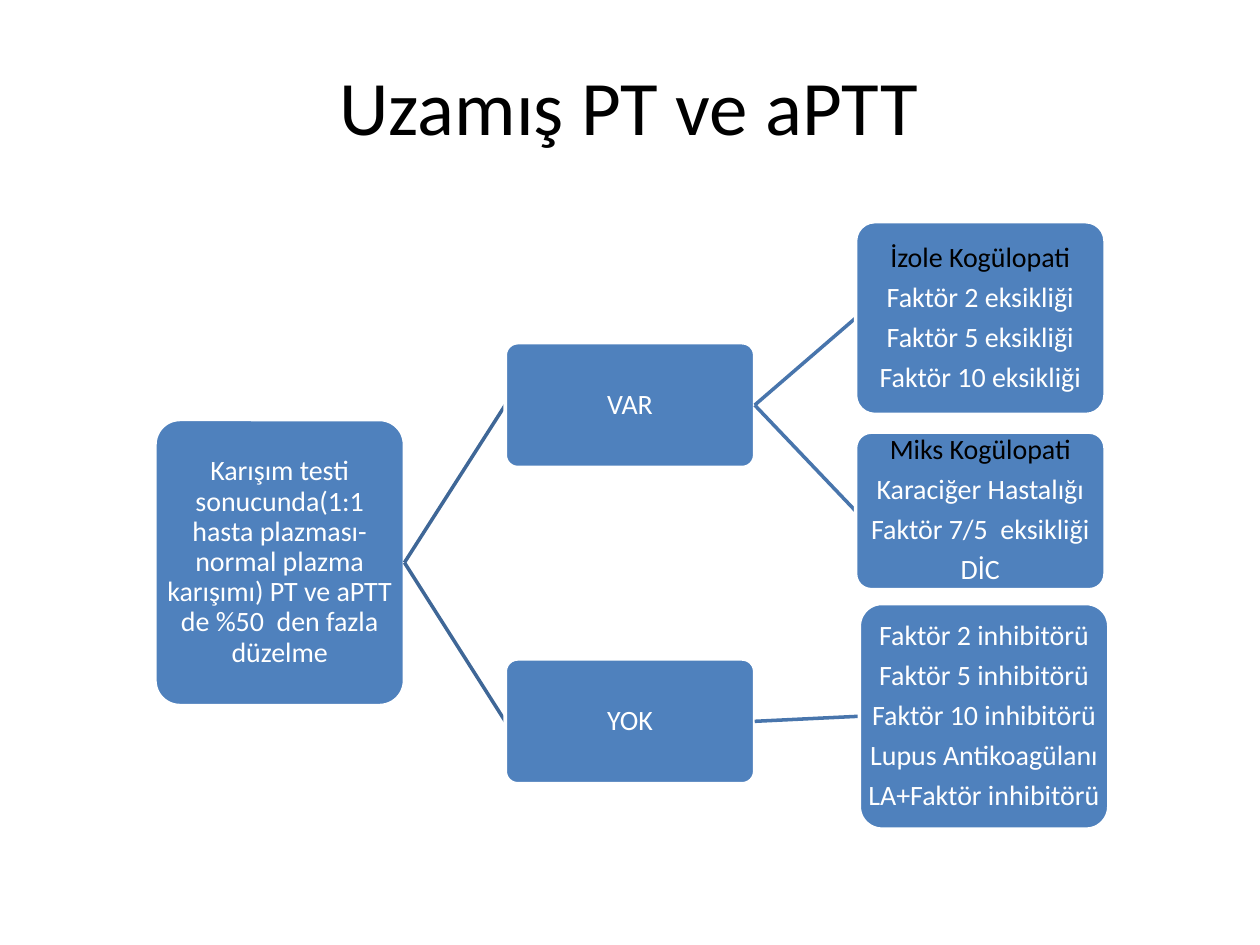
from lxml.etree import SubElement
from pptx import Presentation
from pptx.dml.color import RGBColor
from pptx.enum.shapes import MSO_CONNECTOR, MSO_SHAPE
from pptx.enum.text import MSO_ANCHOR, PP_ALIGN
from pptx.oxml.ns import qn
from pptx.util import Inches, Pt

BLACK = RGBColor(0x00, 0x00, 0x00)
WHITE = RGBColor(0xFF, 0xFF, 0xFF)
BLUE = RGBColor(0x4F, 0x81, 0xBD)
# Branch colour by depth of the child it leads to
BRANCH_COLORS = {1: RGBColor(0x3F, 0x67, 0x97), 2: RGBColor(0x48, 0x75, 0xAC)}

FONT = "Calibri"
BOX_WIDTH = 1.98
COLUMN_LEFT, COLUMN_STEP = 1.23, 2.78


def add_run(paragraph, text, size, color):
    run = paragraph.add_run()
    run.text = text
    run.font.name = FONT
    run.font.size = Pt(size)
    run.font.color.rgb = color


def add_title(slide, text):
    title = slide.shapes.title
    title.left, title.top = Inches(0.48), Inches(0.11)
    title.width, title.height = Inches(9.02), Inches(1.44)
    title.text_frame.vertical_anchor = MSO_ANCHOR.MIDDLE
    paragraph = title.text_frame.paragraphs[0]
    paragraph.alignment = PP_ALIGN.CENTER
    add_run(paragraph, text, 44, BLACK)


def add_box(slide, column, top, height, lines, heading=None, shift=0):
    """Add a rounded box to a column; a heading is set in black above its lines."""
    left = COLUMN_LEFT + column * COLUMN_STEP + shift
    box = slide.shapes.add_shape(MSO_SHAPE.ROUNDED_RECTANGLE, Inches(left),
                                 Inches(top), Inches(BOX_WIDTH), Inches(height))
    box.adjustments[0] = 0.1
    box.shadow.inherit = False
    box.fill.solid()
    box.fill.fore_color.rgb = BLUE
    box.line.color.rgb = WHITE
    box.line.width = Pt(2)

    frame = box.text_frame
    frame.word_wrap = True
    frame.vertical_anchor = MSO_ANCHOR.MIDDLE
    frame.margin_left = frame.margin_right = Inches(0.01)
    frame.margin_top = frame.margin_bottom = Inches(0.01)
    texts = [(heading, BLACK)] if heading else []
    texts += [(line, WHITE) for line in lines]
    for index, (text, color) in enumerate(texts):
        paragraph = frame.add_paragraph() if index else frame.paragraphs[0]
        paragraph.alignment = PP_ALIGN.CENTER
        paragraph.line_spacing = 0.9
        paragraph.space_after = Pt(5.6)
        add_run(paragraph, text, 16, color)
    return box


def add_branch(slide, parent, column, *args, **kwargs):
    """Add a box joined to its parent, with the line behind the new box."""
    branch = slide.shapes.add_connector(MSO_CONNECTOR.STRAIGHT, 0, 0, 0, 0)
    branch.line.color.rgb = BRANCH_COLORS[column]
    branch.line.width = Pt(2)
    SubElement(branch._element.spPr, qn("a:effectLst"))
    child = add_box(slide, column, *args, **kwargs)
    branch.begin_connect(parent, 3)
    branch.end_connect(child, 1)
    return child


def main():
    prs = Presentation()
    prs.slide_width, prs.slide_height = Inches(10), Inches(7.5)
    slide = prs.slides.add_slide(prs.slide_layouts[5])
    add_title(slide, "Uzamış PT ve aPTT")

    # Mixing test
    mixing_test = add_box(slide, 0, 3.33, 2.27, [
        "Karışım testi sonucunda(1:1 hasta plazması-normal plazma karışımı) "
        "PT ve aPTT de %50  den fazla düzelme"])

    # Corrected: coagulopathies
    corrected = add_branch(slide, mixing_test, 1, 2.72, 0.99, ["VAR"])
    add_branch(slide, corrected, 2, 1.76, 1.53,
               [f"Faktör {number} eksikliği" for number in (2, 5, 10)],
               heading="İzole Kogülopati")
    add_branch(slide, corrected, 2, 3.43, 1.25,
               ["Karaciğer Hastalığı", "Faktör 7/5  eksikliği", "DİC"],
               heading="Miks Kogülopati")

    # Not corrected: inhibitors
    uncorrected = add_branch(slide, mixing_test, 1, 5.23, 0.99, ["YOK"])
    inhibitors = [f"Faktör {number} inhibitörü" for number in (2, 5, 10)]
    add_branch(slide, uncorrected, 2, 4.79, 1.79,
               inhibitors + ["Lupus Antikoagülanı", "LA+Faktör inhibitörü"],
               shift=0.03)

    prs.save("out.pptx")


if __name__ == "__main__":
    main()
